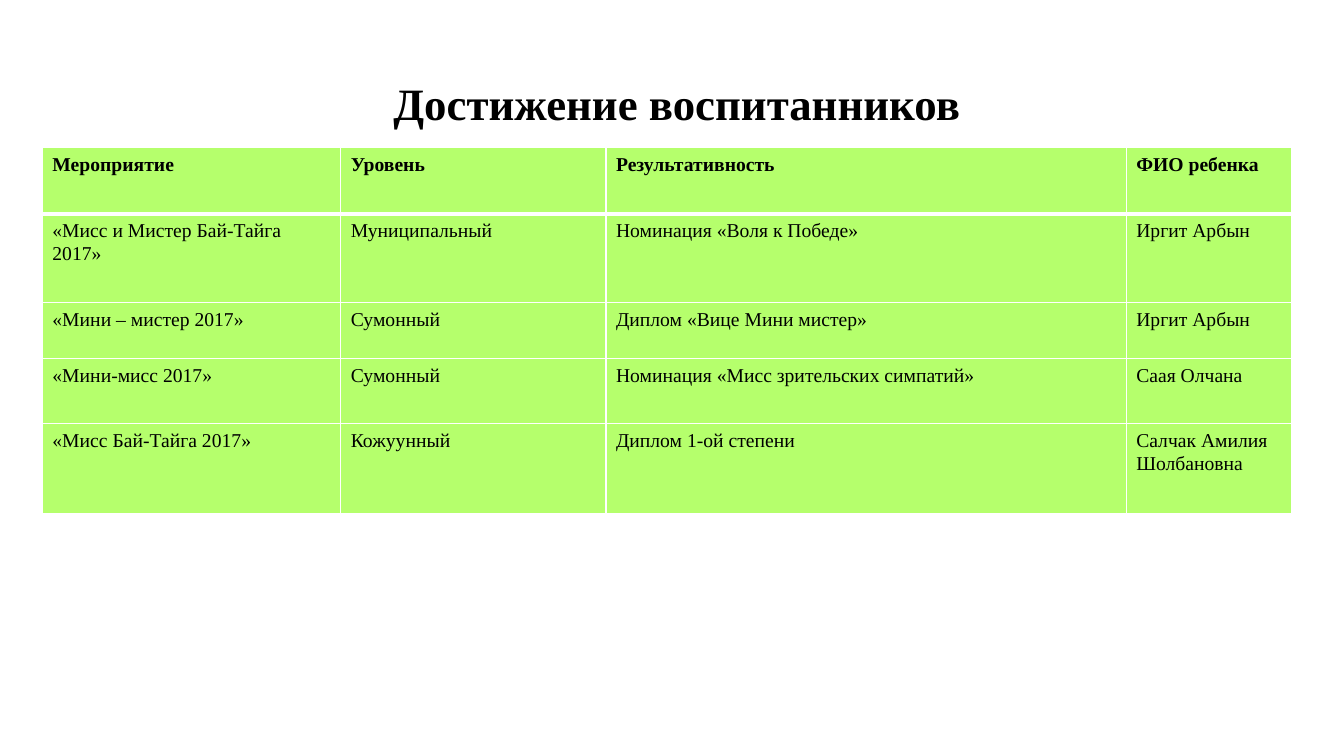
from lxml import etree
from pptx import Presentation
from pptx.dml.color import RGBColor
from pptx.enum import text
from pptx.oxml import ns
from pptx.util import Inches, Pt

BLACK = RGBColor(0, 0, 0)
WHITE = RGBColor(255, 255, 255)
GREEN = RGBColor(0xB5, 0xFF, 0x6C)
FACE = "Times New Roman"


def style(para, size, bold):
    font = para.font
    font.name, font.size, font.bold = FACE, Pt(size), bold
    font.color.rgb = BLACK


def edge(cell, side, width):
    line = etree.Element(ns.qn(f"a:ln{side}"), w=str(Pt(width)))
    fill = etree.SubElement(line, ns.qn("a:solidFill"))
    etree.SubElement(fill, ns.qn("a:srgbClr"), val=str(WHITE))
    return line


deck = Presentation()
deck.slide_width, deck.slide_height = Inches(13.33), Inches(7.5)
slide = deck.slides.add_slide(deck.slide_layouts[6])

title = slide.shapes.add_textbox(Inches(1.05), Inches(0.41), Inches(11.33), Inches(0.92))
frame = title.text_frame
frame.word_wrap = True
frame.vertical_anchor = text.MSO_ANCHOR.BOTTOM
para = frame.paragraphs[0]
para.text = "Достижение воспитанников"
para.alignment = text.PP_ALIGN.CENTER
style(para, 32, True)

rows = [
    ("Мероприятие", "Уровень", "Результативность", "ФИО ребенка"),
    ("«Мисс и Мистер Бай-Тайга 2017»", "Муниципальный", "Номинация «Воля к Победе»", "Иргит Арбын"),
    ("«Мини – мистер 2017»", "Сумонный", "Диплом «Вице Мини мистер»", "Иргит Арбын"),
    ("«Мини-мисс 2017»", "Сумонный", "Номинация «Мисс зрительских симпатий»", "Саая Олчана"),
    ("«Мисс Бай-Тайга 2017»", "Кожуунный", "Диплом 1-ой степени", "Салчак Амилия Шолбановна"),
]
widths = [2.96, 2.63, 5.16, 1.64]
heights = [0.66, 0.88, 0.56, 0.64, 0.9]

table = slide.shapes.add_table(
    len(rows), len(widths), Inches(0.42), Inches(1.46), Inches(12.39), Inches(3.64)
).table
for col, width in zip(table.columns, widths):
    col.width = Inches(width)

for r, (row, height) in enumerate(zip(rows, heights)):
    table.rows[r].height = Inches(height)
    for c, words in enumerate(row):
        cell = table.cell(r, c)
        cell.fill.solid()
        cell.fill.fore_color.rgb = GREEN
        para = cell.text_frame.paragraphs[0]
        para.text = words
        para.line_spacing = 1.07
        style(para, 14, r == 0)
        sides = {"L": 1, "R": 1, "T": 3 if r == 1 else 1, "B": 3 if r == 0 else 1}
        props = cell._tc.get_or_add_tcPr()
        for i, (side, width) in enumerate(sides.items()):
            props.insert(i, edge(cell, side, width))

deck.save("out.pptx")
